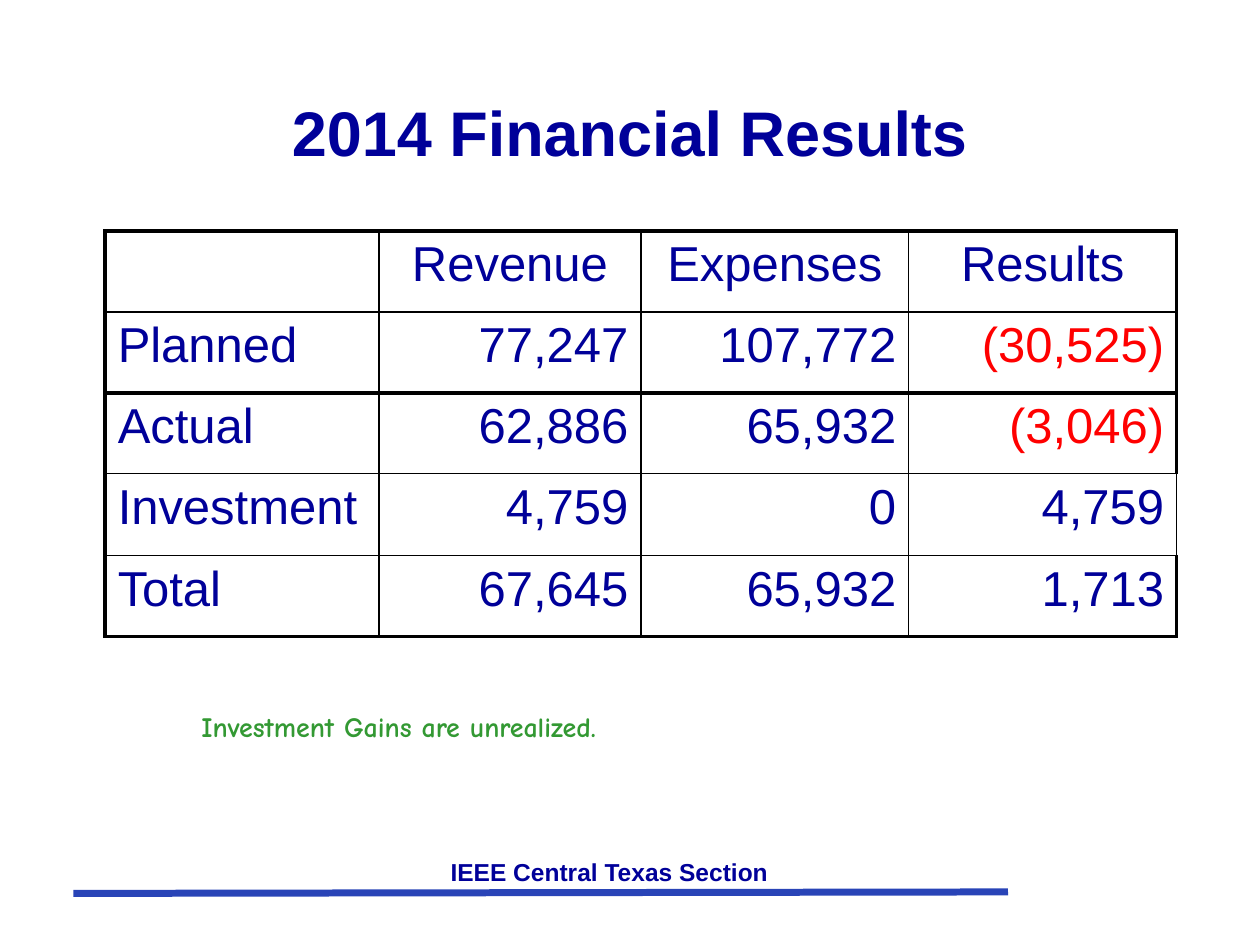
import dataclasses

import pptx
import pptx.dml.color
import pptx.enum.shapes
import pptx.enum.text
import pptx.oxml.ns
import pptx.util
from lxml import etree
from pptx.util import Cm, Pt

ALIGN = pptx.enum.text.PP_ALIGN
ANCHOR = pptx.enum.text.MSO_ANCHOR


@dataclasses.dataclass(frozen=True)
class Theme:
    navy: str = "000099"
    red: str = "FF0000"
    green: str = "339933"
    blue: str = "2944B7"
    black: str = "000000"
    font: str = "Arial"
    note_font: str = "Comic Neue"
    title_size: int = 36
    table_size: int = 28
    note_size: int = 16
    footer_size: int = 14
    thin: float = 1
    outer: float = 2.25
    divider: float = 3


THEME = Theme()

RESULTS = [
    ["", "Revenue", "Expenses", "Results"],
    ["Planned", "77,247", "107,772", "(30,525)"],
    ["Actual", "62,886", "65,932", "(3,046)"],
    ["Investment", "4,759", "0", "4,759"],
    ["Total", "67,645", "65,932", "1,713"],
]
COLUMN_WIDTHS = [5.52, 5.28, 5.4, 5.4]
ROW_HEIGHTS = [1.63, 1.63, 1.63, 1.65, 1.63]
INVESTMENT_ROW = 3


def rgb(color):
    return pptx.dml.color.RGBColor.from_string(color)


def write(frame, text, size, color=THEME.navy, font=THEME.font, bold=False, align=ALIGN.LEFT):
    paragraph = frame.paragraphs[0]
    paragraph.alignment = align
    run = paragraph.add_run()
    run.text = text
    run.font.name = font
    run.font.size = Pt(size)
    run.font.bold = bold
    run.font.color.rgb = rgb(color)


def place(shape, left, top, width, height):
    shape.left, shape.top = Cm(left), Cm(top)
    shape.width, shape.height = Cm(width), Cm(height)


def add_title(slide, text):
    title = slide.shapes.title
    place(title, 1.9, 1.06, 21.59, 3.18)
    title.text_frame.vertical_anchor = ANCHOR.MIDDLE
    write(title.text_frame, text, THEME.title_size, bold=True, align=ALIGN.CENTER)


def add_text(slide, left, top, width, height, text, size, **style):
    box = slide.shapes.add_textbox(Cm(left), Cm(top), Cm(width), Cm(height))
    box.text_frame.word_wrap = True
    write(box.text_frame, text, size, bold=True, **style)


def add_rule(slide, start, end, color, width):
    rule = slide.shapes.add_connector(
        pptx.enum.shapes.MSO_CONNECTOR.STRAIGHT, *map(Cm, start + end))
    rule.line.color.rgb = rgb(color)
    rule.line.width = Pt(width)
    etree.SubElement(rule._element.spPr, pptx.oxml.ns.qn("a:effectLst"))


def set_border(cell, side, width):
    qn = pptx.oxml.ns.qn
    properties = cell._tc.get_or_add_tcPr()
    line = etree.SubElement(properties, qn("a:ln" + side), w=str(Pt(width)))
    fill = etree.SubElement(line, qn("a:solidFill"))
    etree.SubElement(fill, qn("a:srgbClr"), val=THEME.black)


def border_widths(row, column):
    """Heavy frame, a divider below the plan, thin lines elsewhere."""
    last_row, last_column = len(RESULTS) - 1, len(COLUMN_WIDTHS) - 1
    framed_right = column == last_column and row != INVESTMENT_ROW
    horizontal = {0: THEME.outer, 2: THEME.divider, last_row + 1: THEME.outer}
    return {
        "L": THEME.outer if column == 0 else THEME.thin,
        "R": THEME.outer if framed_right else THEME.thin,
        "T": horizontal.get(row, THEME.thin),
        "B": horizontal.get(row + 1, THEME.thin),
    }


def cell_alignment(row, column):
    if row == 0:
        return ALIGN.CENTER
    return ALIGN.LEFT if column == 0 else ALIGN.RIGHT


def add_results_table(slide, left, top):
    table = slide.shapes.add_table(
        len(RESULTS), len(COLUMN_WIDTHS), Cm(left), Cm(top),
        Cm(sum(COLUMN_WIDTHS)), Cm(sum(ROW_HEIGHTS))).table
    table.first_row = table.horz_banding = False
    for column, width in zip(table.columns, COLUMN_WIDTHS):
        column.width = Cm(width)
    for row, height in zip(table.rows, ROW_HEIGHTS):
        row.height = Cm(height)

    for row, values in enumerate(RESULTS):
        for column, value in enumerate(values):
            cell = table.cell(row, column)
            for side, width in border_widths(row, column).items():
                set_border(cell, side, width)
            cell.fill.background()
            if value:
                color = THEME.red if value.startswith("(") else THEME.navy
                write(cell.text_frame, value, THEME.table_size, color,
                      align=cell_alignment(row, column))


def main():
    presentation = pptx.Presentation()
    presentation.slide_width, presentation.slide_height = Cm(25.4), Cm(19.05)
    slide = presentation.slides.add_slide(presentation.slide_layouts[5])

    # Footer
    add_rule(slide, (1.48, 18.01), (20.32, 17.98), THEME.blue, 4)
    add_text(slide, 4.45, 17.15, 15.67, 0.85, "IEEE Central Texas Section",
             THEME.footer_size, align=ALIGN.CENTER)

    # Title and results
    add_title(slide, "2014 Financial Results")
    add_results_table(slide, 2.12, 4.66)

    # Note
    add_text(slide, 3.81, 14.18, 17.78, 0.94, "Investment Gains are unrealized.",
             THEME.note_size, color=THEME.green, font=THEME.note_font)

    presentation.save("out.pptx")


if __name__ == "__main__":
    main()
